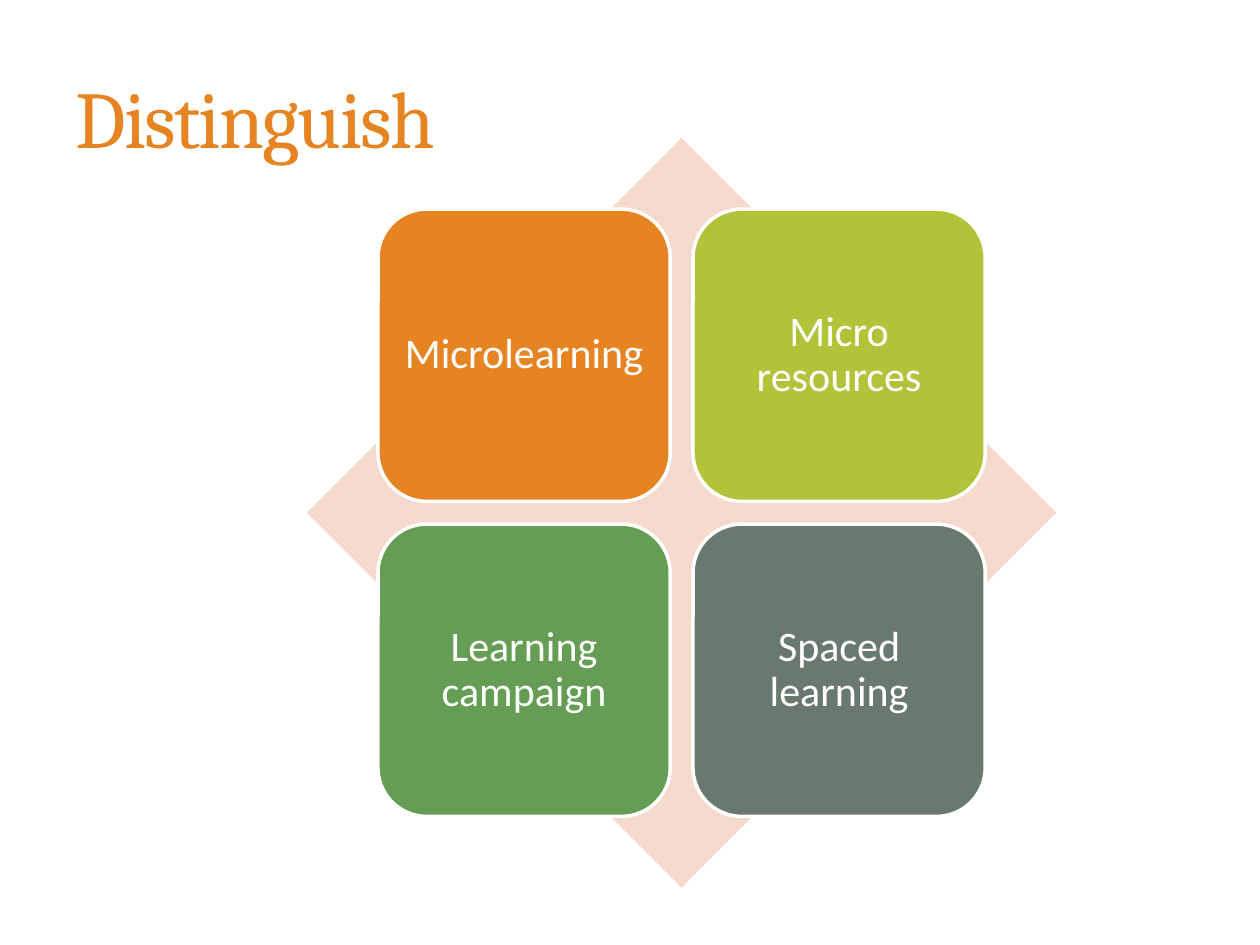
import pptx
import pptx.util
import pptx.dml.color
import pptx.enum.shapes
import pptx.enum.text

Pt = pptx.util.Pt
RGBColor = pptx.dml.color.RGBColor
MSO_SHAPE = pptx.enum.shapes.MSO_SHAPE
PP_ALIGN = pptx.enum.text.PP_ALIGN
MSO_ANCHOR = pptx.enum.text.MSO_ANCHOR

WHITE = RGBColor(0xFF, 0xFF, 0xFF)
ORANGE = RGBColor(0xE6, 0x84, 0x22)
LIME = RGBColor(0xB1, 0xC3, 0x38)
GREEN = RGBColor(0x64, 0x9D, 0x53)
SLATE = RGBColor(0x6A, 0x79, 0x70)
PEACH = RGBColor(0xF5, 0xD9, 0xCD)

TILE_LEFT, TILE_TOP = 216, 119.5
TILE_SIZE, TILE_PITCH = 167, 180
DIAMOND_SIZE = 428.4
TILES = [
    ("Microlearning", ORANGE),
    ("Micro resources", LIME),
    ("Learning campaign", GREEN),
    ("Spaced learning", SLATE),
]


def set_font(paragraph, name, size, color):
    paragraph.font.name = name
    paragraph.font.size = Pt(size)
    paragraph.font.color.rgb = color


def add_title(slide, text):
    title = slide.shapes.title
    title.left, title.top = Pt(36), Pt(21.6)
    title.width, title.height = Pt(600), Pt(90)
    frame = title.text_frame
    frame.text = text
    frame.auto_size = pptx.enum.text.MSO_AUTO_SIZE.NONE
    frame.vertical_anchor = MSO_ANCHOR.MIDDLE
    paragraph = frame.paragraphs[0]
    paragraph.alignment = PP_ALIGN.LEFT
    set_font(paragraph, "Cambria", 46, ORANGE)
    paragraph.runs[0]._r.get_or_add_rPr().set("spc", "-100")


def add_square_shape(shapes, kind, left, top, size, color):
    shape = shapes.add_shape(kind, Pt(left), Pt(top), Pt(size), Pt(size))
    shape.shadow.inherit = False
    shape.fill.solid()
    shape.fill.fore_color.rgb = color
    shape.line.fill.background()
    return shape


def add_tile(shapes, index, text, color):
    row, column = divmod(index, 2)
    tile = add_square_shape(
        shapes, MSO_SHAPE.ROUNDED_RECTANGLE,
        TILE_LEFT + column * TILE_PITCH, TILE_TOP + row * TILE_PITCH,
        TILE_SIZE, color)
    tile.line.color.rgb = WHITE
    tile.line.width = Pt(2)
    frame = tile.text_frame
    frame.word_wrap = True
    frame.vertical_anchor = MSO_ANCHOR.MIDDLE
    frame.margin_left = frame.margin_right = Pt(6)
    frame.margin_top = frame.margin_bottom = Pt(7.2)
    frame.text = text
    paragraph = frame.paragraphs[0]
    paragraph.alignment = PP_ALIGN.CENTER
    paragraph.line_spacing = 0.9
    set_font(paragraph, "Calibri", 24, WHITE)


def add_matrix(slide):
    shapes = slide.shapes.add_group_shape().shapes
    overhang = (DIAMOND_SIZE - TILE_PITCH - TILE_SIZE) / 2
    add_square_shape(shapes, MSO_SHAPE.DIAMOND, TILE_LEFT - overhang,
                     TILE_TOP - overhang, DIAMOND_SIZE, PEACH)
    for index, (text, color) in enumerate(TILES):
        add_tile(shapes, index, text, color)


def main():
    presentation = pptx.Presentation()
    presentation.slide_width, presentation.slide_height = Pt(720), Pt(540)
    slide = presentation.slides.add_slide(presentation.slide_layouts[5])
    add_title(slide, "Distinguish")
    add_matrix(slide)
    presentation.save("out.pptx")


if __name__ == "__main__":
    main()
